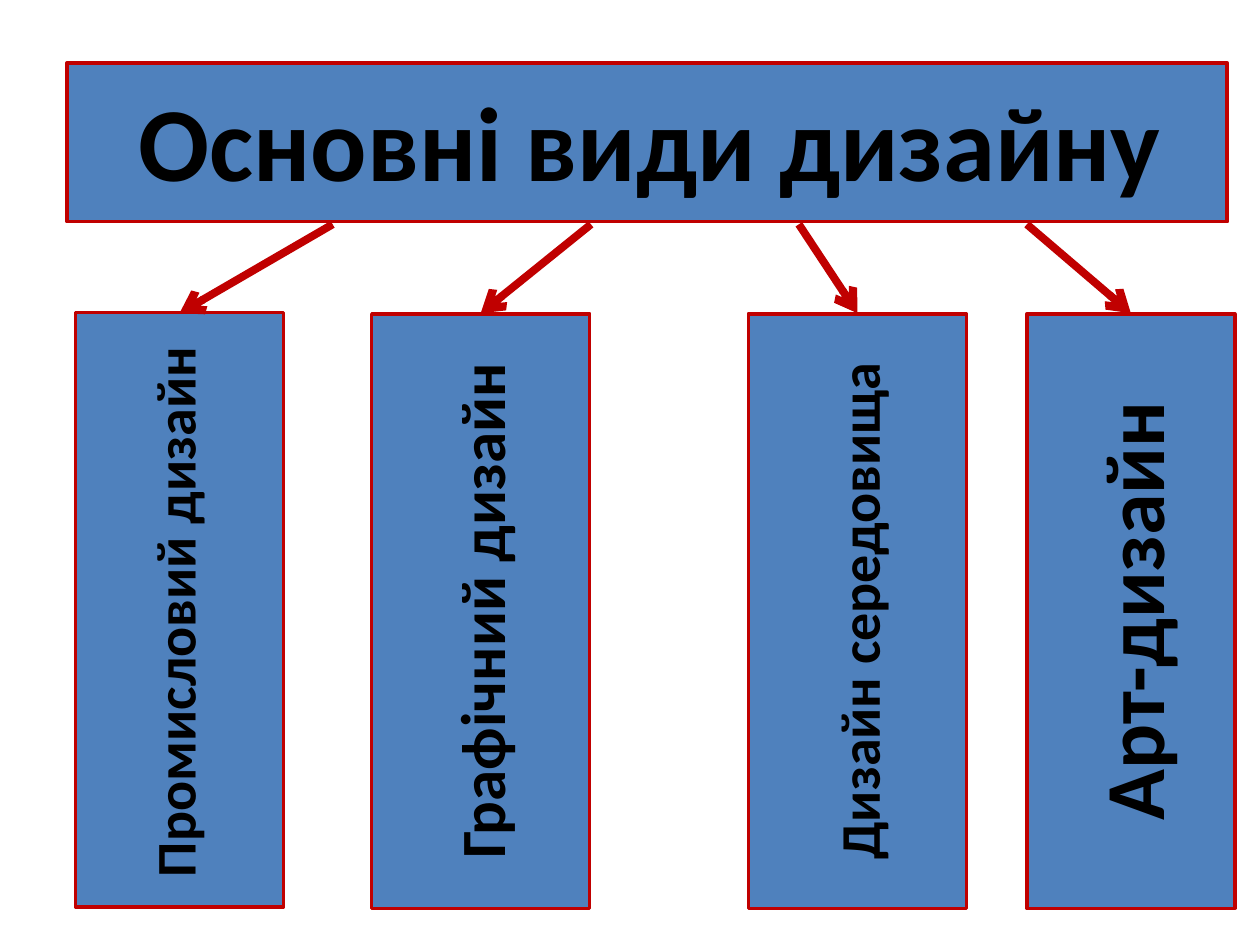
import pptx
import pptx.util
import pptx.dml.color
import pptx.enum.shapes
import pptx.enum.text
import pptx.oxml.ns
import lxml.etree

Pt = pptx.util.Pt
COLORS = {"panel": "4F81BD", "accent": "C00000", "text": "000000"}
FONT = {"name": "Calibri", "bold": True}
ALIGN = pptx.enum.text.PP_ALIGN
ANCHOR = pptx.enum.text.MSO_ANCHOR


class DesignPage:
    """Holds the style and the current slide, and draws its elements."""

    def __init__(self, page):
        self.page = page

    def color(self, name):
        return pptx.dml.color.RGBColor.from_string(COLORS[name])

    def outline(self, line, width):
        line.color.rgb = self.color("accent")
        line.width = Pt(width)

    def put_text(self, box, text, size, align=ALIGN.CENTER, anchor=ANCHOR.TOP, upward=False):
        frame = box.text_frame
        for key, value in {"word_wrap": True, "vertical_anchor": anchor}.items():
            setattr(frame, key, value)
        if upward:
            box._element.txBody.bodyPr.set("vert", "vert270")
        para = frame.paragraphs[0]
        para.alignment = align
        span = para.add_run()
        span.text = text
        for key, value in {**FONT, "size": Pt(size)}.items():
            setattr(span.font, key, value)
        span.font.color.rgb = self.color("text")

    def panel(self, left, top, width, height):
        kind = pptx.enum.shapes.MSO_SHAPE.RECTANGLE
        box = self.page.shapes.add_shape(kind, Pt(left), Pt(top), Pt(width), Pt(height))
        box.shadow.inherit = False
        box.fill.solid()
        box.fill.fore_color.rgb = self.color("panel")
        self.outline(box.line, 2)
        return box

    def label(self, left, top, width, height, text, size, **layout):
        box = self.page.shapes.add_textbox(Pt(left), Pt(top), Pt(width), Pt(height))
        self.put_text(box, text, size, **layout)

    def arrow(self, start_x, start_y, end_x, end_y):
        kind = pptx.enum.shapes.MSO_CONNECTOR.STRAIGHT
        arrow = self.page.shapes.add_connector(kind, Pt(start_x), Pt(start_y), Pt(end_x), Pt(end_y))
        self.outline(arrow.line, 4.5)
        qn = pptx.oxml.ns.qn
        properties = arrow._element.spPr
        lxml.etree.SubElement(properties.get_or_add_ln(), qn("a:tailEnd"), type="arrow")
        lxml.etree.SubElement(properties, qn("a:effectLst"))


def main():
    deck = pptx.Presentation()
    deck.slide_width, deck.slide_height = Pt(720), Pt(540)
    design = DesignPage(deck.slides.add_slide(deck.slide_layouts[6]))

    design.panel(38.2, 36, 663.1, 90.7)
    design.label(54, 40.3, 635, 80, "Основні види дизайну", 60)

    column_height = 339.8
    design.panel(43.2, 178.6, 118.8, column_height)
    columns = [
        (212.4, 124.6, "Графічний дизайн", 36),
        (427.7, 124.6, "Дизайн середовища", 32),
        (586.8, 118.8, "Арт-дизайн", 48),
    ]
    for left, width, text, size in columns:
        box = design.panel(left, 179.3, width, column_height)
        design.put_text(box, text, size, anchor=ANCHOR.MIDDLE, upward=True)

    arrows = [(190.1, 102.6), (337.7, 274.7), (456.5, 490), (586.8, 646.2)]
    for start, end in arrows:
        design.arrow(start, 128.2, end, 179)

    design.label(76.3, 179.3, 74.9, 329, "Промисловий дизайн", 32, align=ALIGN.LEFT, upward=True)
    deck.save("out.pptx")


if __name__ == "__main__":
    main()
